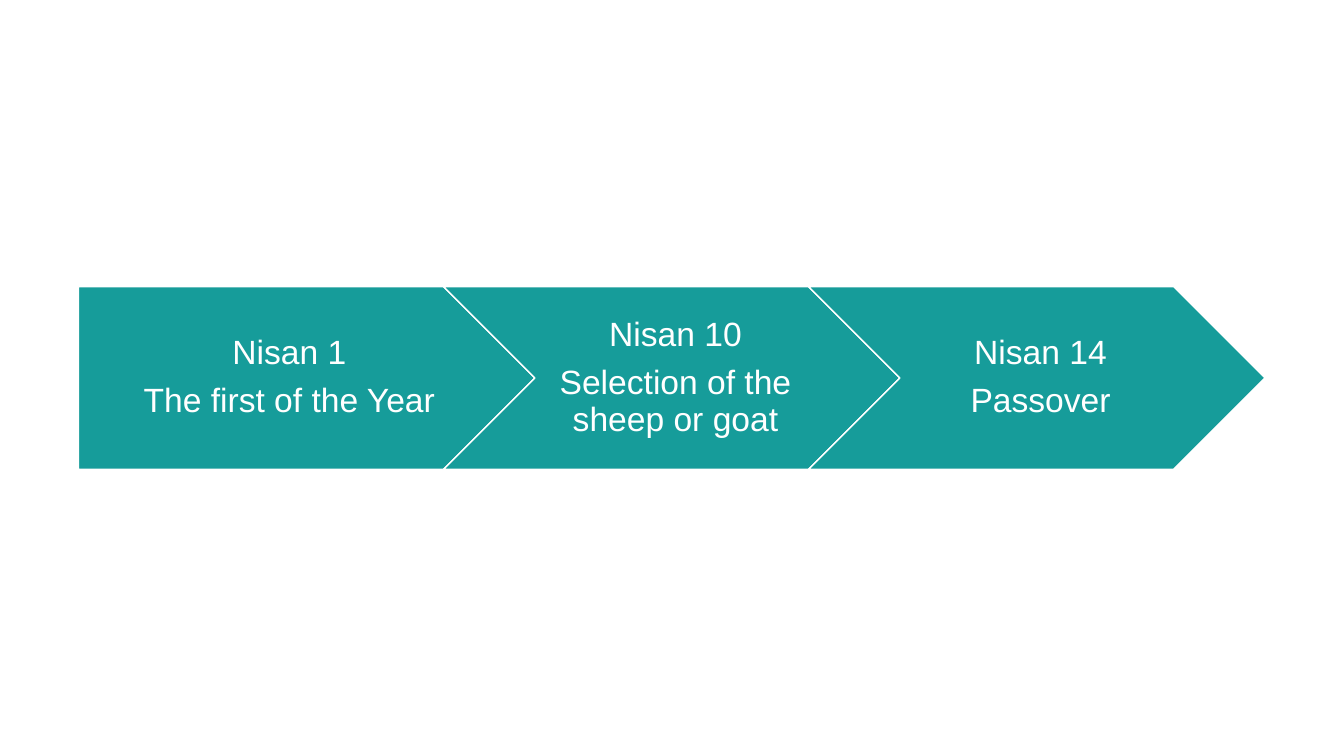
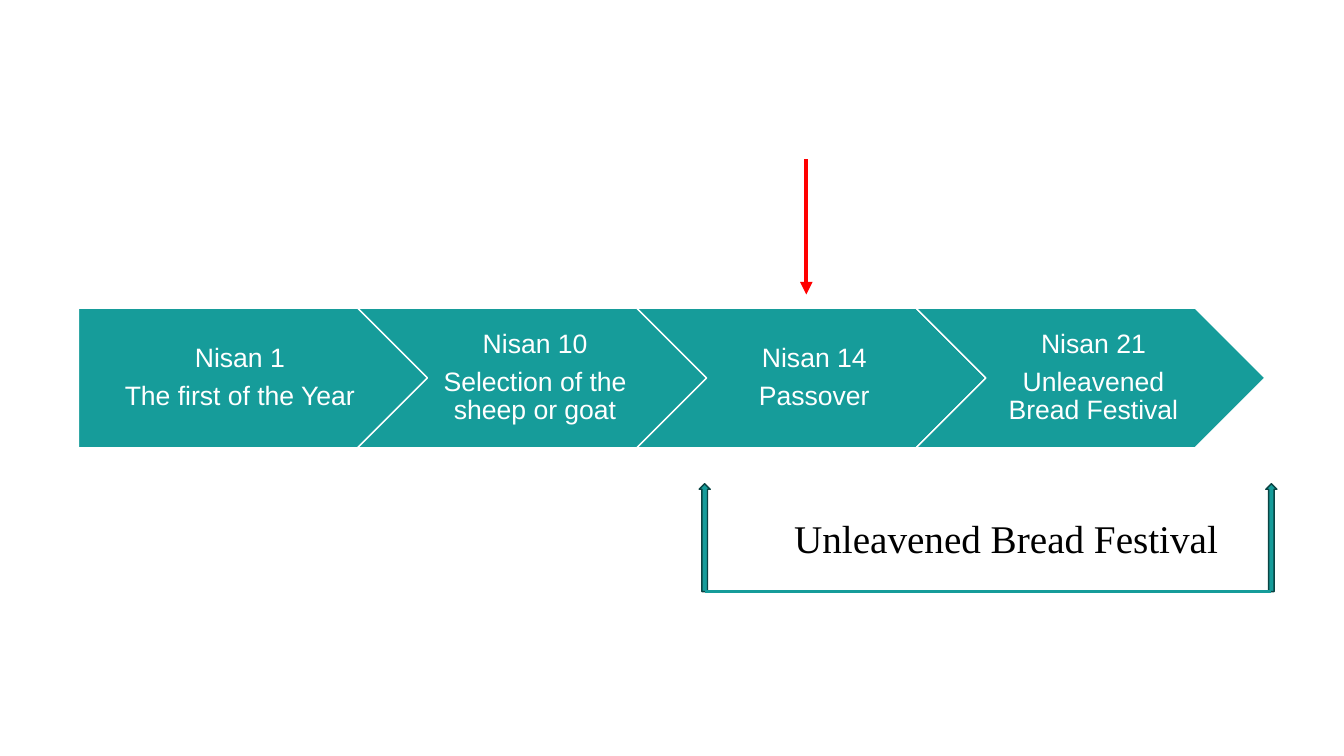
from dataclasses import dataclass

from lxml.etree import SubElement
from pptx import Presentation
from pptx.dml.color import RGBColor
from pptx.enum.shapes import MSO_CONNECTOR as Line, MSO_SHAPE as Shape
from pptx.enum.text import MSO_ANCHOR as Anchor, PP_ALIGN as Align
from pptx.oxml.ns import qn
from pptx.util import Cm, Pt


@dataclass(frozen=True)
class Theme:
    """Colours, fonts and type sizes of the deck."""
    teal: str = "169C9A"
    dark: str = "0A4443"
    white: str = "FFFFFF"
    black: str = "000000"
    red: str = "FF0000"
    sans: str = "Arial"
    serif: str = "Times New Roman"
    wide_step: int = 24
    narrow_step: int = 19
    caption: int = 28


T = Theme()
SLIDE_W, SLIDE_H = 33.87, 19.05
BAND_LEFT, BAND_W = 1.98, 29.9
OVERLAP, ASPECT = 0.2, 0.4

STEPS = [
    ("Nisan 1", "The first of the Year"),
    ("Nisan 10", "Selection of the sheep or goat"),
    ("Nisan 14", "Passover"),
]
FESTIVAL_STEP = ("Nisan 21", "Unleavened Bread Festival")
FESTIVAL = {
    "text": "Unleavened Bread Festival",
    "box": (18.52, 12.83, 13.67, 1.45),
    "ends": (17.76, 32.04),
    "top": 12.19,
    "height": 2.72,
    "width": 0.28,
}
MARKER = (20.32, 4.01, 20.32, 7.42)


def add_text(tf, lines, size, font, color, spacing=1.0, after=0.0):
    """Write centred paragraphs into a text frame."""
    tf.word_wrap = True
    for i, line in enumerate(lines):
        p = tf.paragraphs[0] if i == 0 else tf.add_paragraph()
        p.alignment = Align.CENTER
        p.line_spacing = spacing
        p.space_after = Pt(after)
        r = p.add_run()
        r.text = line
        r.font.size = Pt(size)
        r.font.name = font
        r.font.color.rgb = RGBColor.from_string(color)


def add_block(s, kind, box, line):
    """Add a teal preset shape with a thin outline."""
    sp = s.shapes.add_shape(kind, *map(Cm, box))
    sp.shadow.inherit = False
    sp.fill.solid()
    sp.fill.fore_color.rgb = RGBColor.from_string(T.teal)
    sp.line.color.rgb = RGBColor.from_string(line)
    sp.line.width = Pt(1)
    return sp


def add_line(s, ends, color, width, arrow=False):
    """Add a straight line, with an arrowhead at its end if asked."""
    c = s.shapes.add_connector(Line.STRAIGHT, *map(Cm, ends))
    c.line.color.rgb = RGBColor.from_string(color)
    c.line.width = Pt(width)
    if arrow:
        SubElement(c.line._get_or_add_ln(), qn("a:tailEnd"), type="triangle")
    SubElement(c._element.spPr, qn("a:effectLst"))
    return c


def add_timeline(s, steps, size):
    """Fill the band with overlapping steps, centred on the slide's height."""
    w = BAND_W / (len(steps) - (len(steps) - 1) * OVERLAP)
    h = w * ASPECT
    for i, lines in enumerate(steps):
        kind = Shape.CHEVRON if i else Shape.PENTAGON
        left = BAND_LEFT + i * w * (1 - OVERLAP)
        sp = add_block(s, kind, (left, (SLIDE_H - h) / 2, w, h), T.white)
        tf = sp.text_frame
        tf.vertical_anchor = Anchor.MIDDLE
        tf.margin_left = Pt(size * (0.32 if i else 0.42))
        tf.margin_right = Pt(size * 0.1)
        tf.margin_top = tf.margin_bottom = Pt(size * 0.21)
        add_text(tf, lines, size, T.sans, T.white, spacing=0.9, after=size * 0.35)


def add_festival(s, text, box, ends, top, height, width):
    """Add the bracket of two up arrows and a base line, with its caption."""
    first, last = [
        add_block(s, Shape.UP_ARROW, (x - width / 2, top, width, height), T.dark)
        for x in ends
    ]
    base = top + height
    c = add_line(s, (ends[0], base, ends[1], base), T.teal, 2.25)
    c.begin_connect(first, 2)
    c.end_connect(last, 2)
    tb = s.shapes.add_textbox(*map(Cm, box))
    add_text(tb.text_frame, [text], T.caption, T.serif, T.black)


def main():
    """Build and save the deck."""
    prs = Presentation()
    prs.slide_width, prs.slide_height = Cm(SLIDE_W), Cm(SLIDE_H)
    blank = prs.slide_layouts[6]

    s = prs.slides.add_slide(blank)
    add_timeline(s, STEPS, T.wide_step)

    s = prs.slides.add_slide(blank)
    add_timeline(s, STEPS + [FESTIVAL_STEP], T.narrow_step)
    add_festival(s, **FESTIVAL)
    add_line(s, MARKER, T.red, 3, arrow=True)

    prs.save("out.pptx")


if __name__ == "__main__":
    main()
